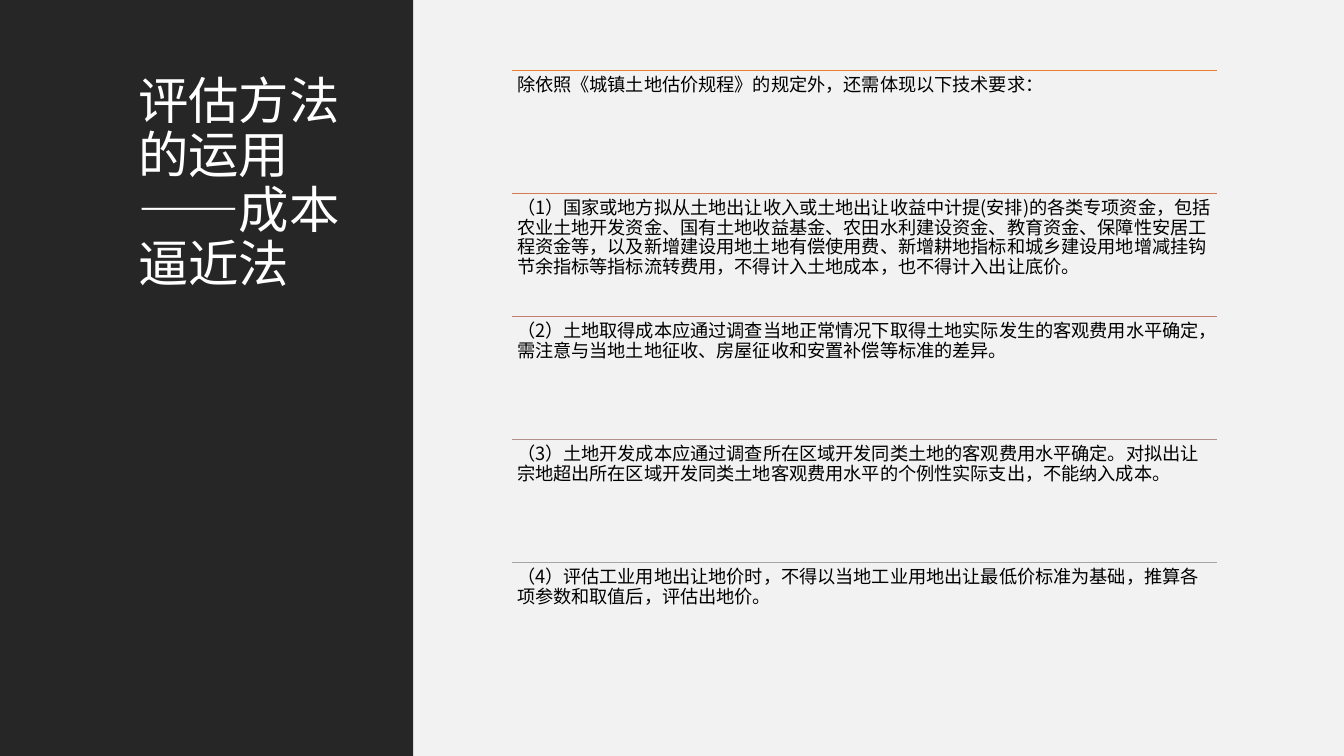
"""Build a slide on the cost approach: a dark title panel beside five ruled requirements."""
import pptx
import pptx.dml.color
import pptx.enum.shapes
import pptx.enum.text
import pptx.oxml.ns
import pptx.util
import lxml.etree

Cm = pptx.util.Cm

COLOURS = {
    "background": "FFFFFF",
    "content": "F2F2F2",
    "panel": "262626",
    "title": "FFFFFF",
    "body": "000000",
}

TITLE = "评估方法的运用——成本逼近法"

REQUIREMENTS = [
    ("ED7D31", "除依照《城镇土地估价规程》的规定外，还需体现以下技术要求："),
    ("D87A51", "（1）国家或地方拟从土地出让收入或土地出让收益中计提(安排)的各类专项资金，"
               "包括农业土地开发资金、国有土地收益基金、农田水利建设资金、教育资金、"
               "保障性安居工程资金等，以及新增建设用地土地有偿使用费、新增耕地指标和"
               "城乡建设用地增减挂钩节余指标等指标流转费用，不得计入土地成本，"
               "也不得计入出让底价。"),
    ("C48170", "（2）土地取得成本应通过调查当地正常情况下取得土地实际发生的客观费用水平确定，"
               "需注意与当地土地征收、房屋征收和安置补偿等标准的差异。"),
    ("B4908B", "（3）土地开发成本应通过调查所在区域开发同类土地的客观费用水平确定。"
               "对拟出让宗地超出所在区域开发同类土地客观费用水平的个例性实际支出，"
               "不能纳入成本。"),
    ("A5A5A5", "（4）评估工业用地出让地价时，不得以当地工业用地出让最低价标准为基础，"
               "推算各项参数和取值后，评估出地价。"),
]


class SlideBuilder:
    font = "Noto Sans CJK SC"
    line_spacing = 0.9

    def __init__(self, page):
        self.page = page

    def colour(self, value):
        return pptx.dml.color.RGBColor.from_string(value)

    def background(self, colour):
        fill = self.page.background.fill
        fill.solid()
        fill.fore_color.rgb = self.colour(colour)

    def panel(self, left, top, width, height, colour):
        panel = self.page.shapes.add_shape(
            pptx.enum.shapes.MSO_SHAPE.RECTANGLE, Cm(left), Cm(top), Cm(width), Cm(height))
        panel.shadow.inherit = False
        panel.fill.solid()
        panel.fill.fore_color.rgb = self.colour(colour)
        panel.line.fill.background()

    def rule(self, left, top, width, colour):
        rule = self.page.shapes.add_connector(
            pptx.enum.shapes.MSO_CONNECTOR.STRAIGHT,
            Cm(left), Cm(top), Cm(left + width), Cm(top))
        rule.line.color.rgb = self.colour(colour)
        rule.line.width = pptx.util.Pt(1)
        lxml.etree.SubElement(rule._element.spPr, pptx.oxml.ns.qn("a:effectLst"))

    def text(self, left, top, width, height, words, size, colour, side_inset, end_inset):
        box = self.page.shapes.add_textbox(Cm(left), Cm(top), Cm(width), Cm(height))
        frame = box.text_frame
        frame.word_wrap = True
        frame.vertical_anchor = pptx.enum.text.MSO_ANCHOR.TOP
        frame.margin_left = frame.margin_right = Cm(side_inset)
        frame.margin_top = frame.margin_bottom = Cm(end_inset)
        para = frame.paragraphs[0]
        para.line_spacing = self.line_spacing
        span = para.add_run()
        span.text = words
        span.font.size = pptx.util.Pt(size)
        span.font.name = self.font
        span.font.color.rgb = self.colour(colour)
        east_asian = lxml.etree.SubElement(span.font._element, pptx.oxml.ns.qn("a:ea"))
        east_asian.set("typeface", self.font)


def main():
    deck = pptx.Presentation()
    deck.slide_width, deck.slide_height = Cm(33.87), Cm(19.05)
    page = deck.slides.add_slide(deck.slide_layouts[6])
    builder = SlideBuilder(page)

    builder.background(COLOURS["background"])
    builder.panel(10.4, 0, 23.47, 19.05, COLOURS["content"])
    builder.panel(0, 0, 10.41, 19.05, COLOURS["panel"])
    builder.text(3.23, 1.78, 6.1, 15.49, TITLE, 36, COLOURS["title"], 0.25, 0.13)

    left, first_top, width, row_height = 12.9, 1.78, 17.78, 3.1
    for index, (rule_colour, words) in enumerate(REQUIREMENTS):
        top = first_top + index * row_height
        builder.rule(left, top, width, rule_colour)
        builder.text(left, top, width, row_height, words, 13, COLOURS["body"], 0.13, 0.13)

    deck.save("out.pptx")


if __name__ == "__main__":
    main()
